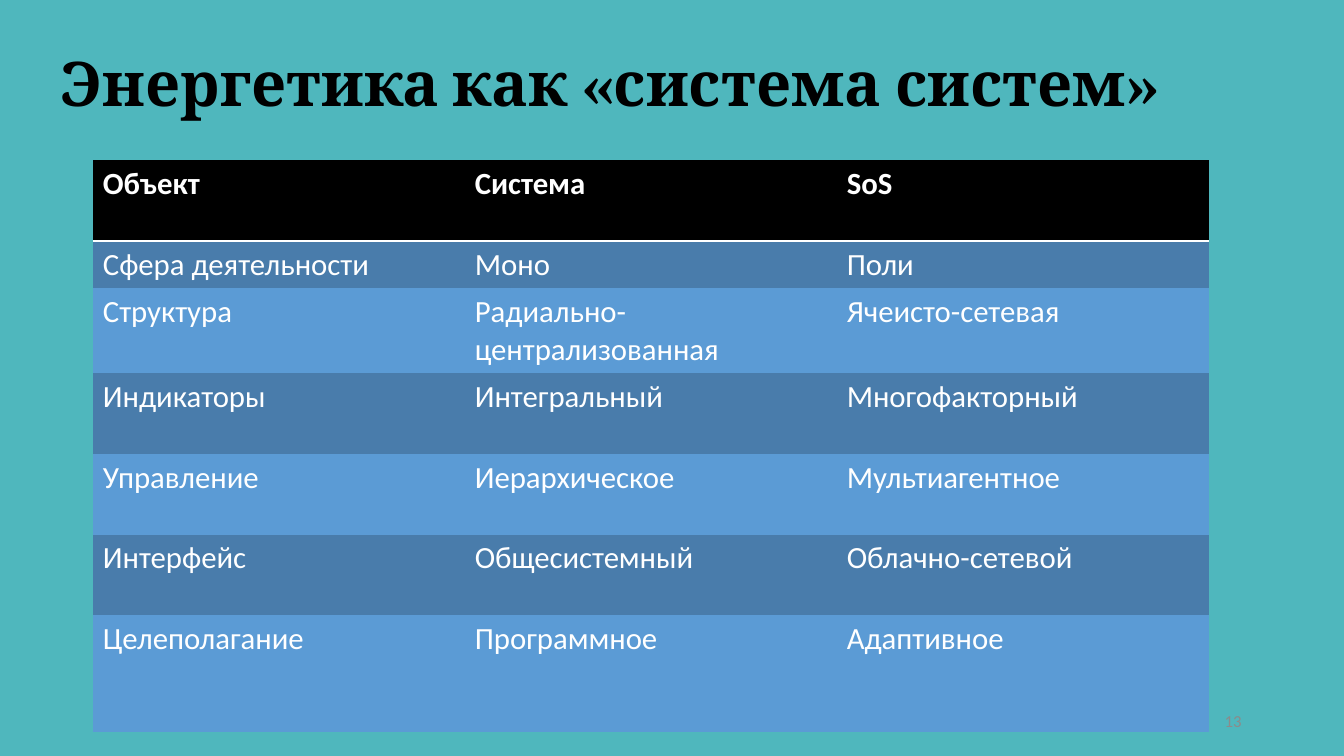
from lxml import etree
from pptx import Presentation
from pptx.dml.color import RGBColor
from pptx.enum import text
from pptx.oxml import ns
from pptx.util import Cm, Pt

COLORS = {
    "background": "4FB7BD",
    "heading": "000000",
    "header": "000000",
    "odd": "497CAB",
    "even": "5B9BD5",
    "cell": "FFFFFF",
    "number": "8B8B8B",
}
NO_GRID_STYLE = "{2D5ABB26-0587-4C30-8999-92F81FD0307C}"
COMPARISON = [
    ("Объект", "Система", "SoS"),
    ("Сфера деятельности", "Моно", "Поли"),
    ("Структура", "Радиально-централизованная", "Ячеисто-сетевая"),
    ("Индикаторы", "Интегральный", "Многофакторный"),
    ("Управление", "Иерархическое", "Мультиагентное"),
    ("Интерфейс", "Общесистемный", "Облачно-сетевой"),
    ("Целеполагание", "Программное", "Адаптивное"),
]
ROW_HEIGHTS = [2.03, 1.14, 1.14, 2.03, 2.03, 2.03, 2.95]


def rgb(name):
    """Return the palette colour with the given name."""
    return RGBColor.from_string(COLORS[name])


def write(frame, wording, font_name, size, color, bold=False):
    """Put one formatted paragraph into a text frame and return it."""
    frame.text = wording
    paragraph = frame.paragraphs[0]
    font = paragraph.runs[0].font
    font.name, font.size, font.bold = font_name, Pt(size), bold
    font.color.rgb = rgb(color)
    return paragraph


def underline_cell(cell, color, width):
    """Draw a bottom border on a table cell."""
    border = etree.Element(ns.qn("a:lnB"), w=str(Pt(width)))
    fill = etree.SubElement(border, ns.qn("a:solidFill"))
    etree.SubElement(fill, ns.qn("a:srgbClr"), val=COLORS[color])
    cell._tc.get_or_add_tcPr().insert(0, border)


def add_heading(slide, left, top, width, height):
    """Place the slide title in the given box."""
    heading = slide.shapes.title
    heading.left, heading.top = Cm(left), Cm(top)
    heading.width, heading.height = Cm(width), Cm(height)
    line = write(heading.text_frame, "Энергетика как «система систем»",
                 "Cambria", 44, "heading", bold=True)
    line.alignment = text.PP_ALIGN.LEFT
    line.line_spacing = 1.5


def add_comparison(slide, left, top, width):
    """Place the comparison table with equal columns across the given width."""
    frame = slide.shapes.add_table(len(COMPARISON), len(COMPARISON[0]), Cm(left),
                                   Cm(top), Cm(width), Cm(sum(ROW_HEIGHTS)))
    comparison = frame.table
    comparison.horz_banding = False
    comparison._tbl.tblPr.find(ns.qn("a:tableStyleId")).text = NO_GRID_STYLE
    for column in comparison.columns:
        column.width = Cm(width / len(COMPARISON[0]))
    for index, (row, entries) in enumerate(zip(comparison.rows, COMPARISON)):
        row.height = Cm(ROW_HEIGHTS[index])
        is_header = index == 0
        band = "header" if is_header else ("even", "odd")[index % 2]
        for cell, entry in zip(row.cells, entries):
            write(cell.text_frame, entry, "Calibri", 22, "cell", bold=is_header)
            cell.fill.solid()
            cell.fill.fore_color.rgb = rgb(band)
            if is_header:
                underline_cell(cell, "cell", 2)


def add_page_number(slide, left, top, width, height):
    """Place the page number at the right of the given box."""
    number = slide.shapes.add_textbox(Cm(left), Cm(top), Cm(width), Cm(height))
    number.text_frame.word_wrap = True
    number.text_frame.vertical_anchor = text.MSO_ANCHOR.MIDDLE
    line = write(number.text_frame, "13", "Calibri", 12, "number")
    line.alignment = text.PP_ALIGN.RIGHT


def main():
    """Build and save the slide."""
    deck = Presentation()
    deck.slide_width, deck.slide_height = Cm(33.87), Cm(19.05)
    slide = deck.slides.add_slide(deck.slide_layouts[5])
    slide.background.fill.solid()
    slide.background.fill.fore_color.rgb = rgb("background")
    add_heading(slide, 1.27, -0.23, 32.28, 3.68)
    add_comparison(slide, 2.34, 4.04, 28.12)
    add_page_number(slide, 29.54, 17.66, 2, 1.01)
    deck.save("out.pptx")


if __name__ == "__main__":
    main()
